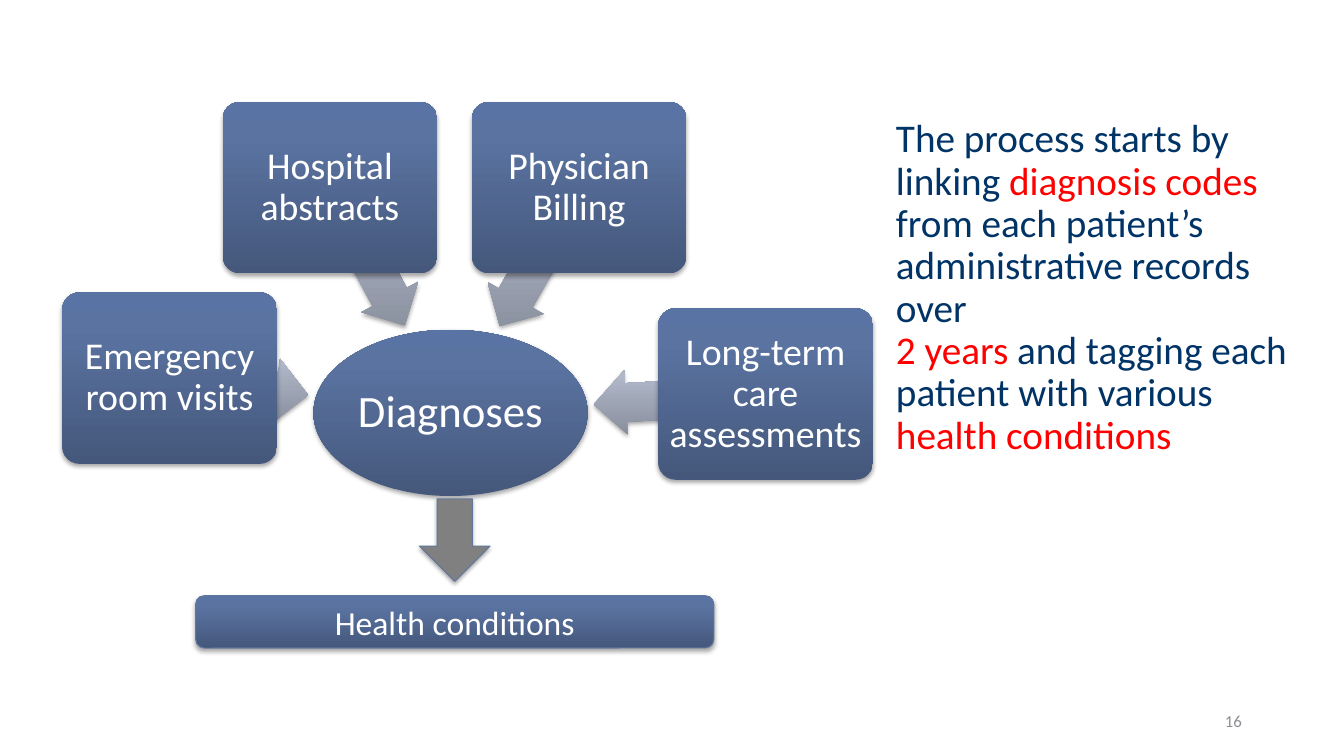
from copy import deepcopy

from lxml.etree import SubElement
from pptx import Presentation
from pptx.dml.color import RGBColor
from pptx.enum.shapes import MSO_SHAPE
from pptx.enum.text import MSO_ANCHOR, PP_ALIGN
from pptx.oxml.ns import qn
from pptx.util import Cm, Pt

FONT = "Calibri"
COLORS = {
    "white": "FFFFFF",
    "navy": "003366",
    "red": "FF0000",
    "outline": "61769C",
    "outflow": "808080",
    "number": "8C8E94",
    "shadow": "000000",
}
BLUE_STOPS = [(0, "45587C"), (0.8, "5A73A1"), (1, "5973A4")]
GREY_STOPS = [(0, "878D9B"), (0.8, "AFB7C9"), (1, "B0B8CA")]
BOX_WIDTH, BOX_HEIGHT = 5.41, 4.32
ARROW_HEIGHT = 1.63

SOURCES = [
    ("Emergency room visits", (1.57, 7.37), (4.27, 8.92, 3.51), 187.1),
    ("Hospital abstracts", (5.61, 2.57), (7.29, 5.64, 3.96), 241.9),
    ("Physician Billing", (11.89, 2.57), (11.58, 5.66, 4.01), 299.7),
    ("Long-term care assessments", (16.59, 7.77), (14.96, 9.25, 4.39), 356.7),
]
EXPLANATION = [
    [
        ("The process starts by linking ", "navy"),
        ("diagnosis codes ", "red"),
        ("from each patient’s administrative records over", "navy"),
    ],
    [("2 years ", "red"), ("and tagging each patient with various", "navy")],
    [("health conditions", "red")],
]


def rgb(name):
    return RGBColor.from_string(COLORS[name])


def style_font(font, size, color):
    font.name = FONT
    font.size = Pt(size)
    font.color.rgb = rgb(color)


def set_insets(frame, side, top):
    frame.margin_left = frame.margin_right = Cm(side)
    frame.margin_top = frame.margin_bottom = Cm(top)


def add_shadow(shape):
    shape.shadow.inherit = False
    effects = shape._element.spPr.find(qn("a:effectLst"))
    outer = SubElement(effects, qn("a:outerShdw"), blurRad="40000",
                       dist="23000", dir="5400000", rotWithShape="0")
    tone = SubElement(outer, qn("a:srgbClr"), val=COLORS["shadow"])
    SubElement(tone, qn("a:alpha"), val="35000")


def fill_gradient(shape, stops):
    shape.fill.gradient()
    shape.fill.gradient_angle = 90
    gradient = shape._element.spPr.find(qn("a:gradFill"))
    gradient.set("rotWithShape", "0")
    stop_list = gradient.find(qn("a:gsLst"))
    stop_list.insert(1, deepcopy(stop_list[0]))
    for stop, (position, color) in zip(shape.fill.gradient_stops, stops):
        stop.position = position
        stop.color.rgb = RGBColor.from_string(color)


def add_figure(slide, kind, bounds, stops=None, outlined=False):
    figure = slide.shapes.add_shape(kind, *map(Cm, bounds))
    if stops:
        fill_gradient(figure, stops)
    else:
        figure.fill.solid()
        figure.fill.fore_color.rgb = rgb("outflow")
    if outlined:
        figure.line.color.rgb = rgb("outline")
        figure.line.width = Pt(0.75)
    else:
        figure.line.fill.background()
    add_shadow(figure)
    return figure


def write_label(figure, text, size, spacing=0.9):
    frame = figure.text_frame
    frame.word_wrap = True
    frame.vertical_anchor = MSO_ANCHOR.MIDDLE
    frame.text = text
    paragraph = frame.paragraphs[0]
    paragraph.alignment = PP_ALIGN.CENTER
    paragraph.line_spacing = spacing
    style_font(paragraph.runs[0].font, size, "white")


def add_source(slide, name, corner, arrow_place, angle):
    arrow = add_figure(slide, MSO_SHAPE.LEFT_ARROW,
                       (*arrow_place, ARROW_HEIGHT), GREY_STOPS)
    arrow.adjustments[0] = 0.6
    arrow.rotation = angle
    box = add_figure(slide, MSO_SHAPE.ROUNDED_RECTANGLE,
                     (*corner, BOX_WIDTH, BOX_HEIGHT), BLUE_STOPS)
    box.adjustments[0] = 0.1
    set_insets(box.text_frame, 0.14, 0.14)
    write_label(box, name, 27)


def add_explanation(slide):
    explanation = slide.shapes.add_textbox(Cm(22.4), Cm(2.92), Cm(11.13), Cm(8.7))
    frame = explanation.text_frame
    frame.word_wrap = True
    set_insets(frame, 0.18, 0.08)
    for index, pieces in enumerate(EXPLANATION):
        paragraph = frame.add_paragraph() if index else frame.paragraphs[0]
        paragraph.line_spacing = 0.9
        for text, color in pieces:
            run = paragraph.add_run()
            run.text = text
            style_font(run.font, 28, color)


def add_page_number(slide, number):
    page_number = slide.shapes.add_textbox(Cm(23.93), Cm(17.65), Cm(7.62), Cm(1.02))
    frame = page_number.text_frame
    frame.word_wrap = True
    frame.vertical_anchor = MSO_ANCHOR.MIDDLE
    frame.text = number
    paragraph = frame.paragraphs[0]
    paragraph.alignment = PP_ALIGN.RIGHT
    style_font(paragraph.runs[0].font, 12, "number")


def main():
    deck = Presentation()
    deck.slide_width, deck.slide_height = Cm(33.87), Cm(19.05)
    slide = deck.slides.add_slide(deck.slide_layouts[6])

    diagnoses = add_figure(slide, MSO_SHAPE.OVAL, (7.9, 8.31, 6.91, 4.19), BLUE_STOPS)
    set_insets(diagnoses.text_frame, 0.05, 0.05)
    write_label(diagnoses, "Diagnoses", 32)
    for source in SOURCES:
        add_source(slide, *source)

    conditions = add_figure(slide, MSO_SHAPE.ROUNDED_RECTANGLE,
                            (4.93, 15.01, 13.06, 1.32), BLUE_STOPS, outlined=True)
    write_label(conditions, "Health conditions", 24, spacing=1.0)
    add_figure(slide, MSO_SHAPE.DOWN_ARROW, (10.57, 12.57, 1.78, 2.08), outlined=True)

    add_explanation(slide)
    add_page_number(slide, "16")
    deck.save("out.pptx")


if __name__ == "__main__":
    main()
